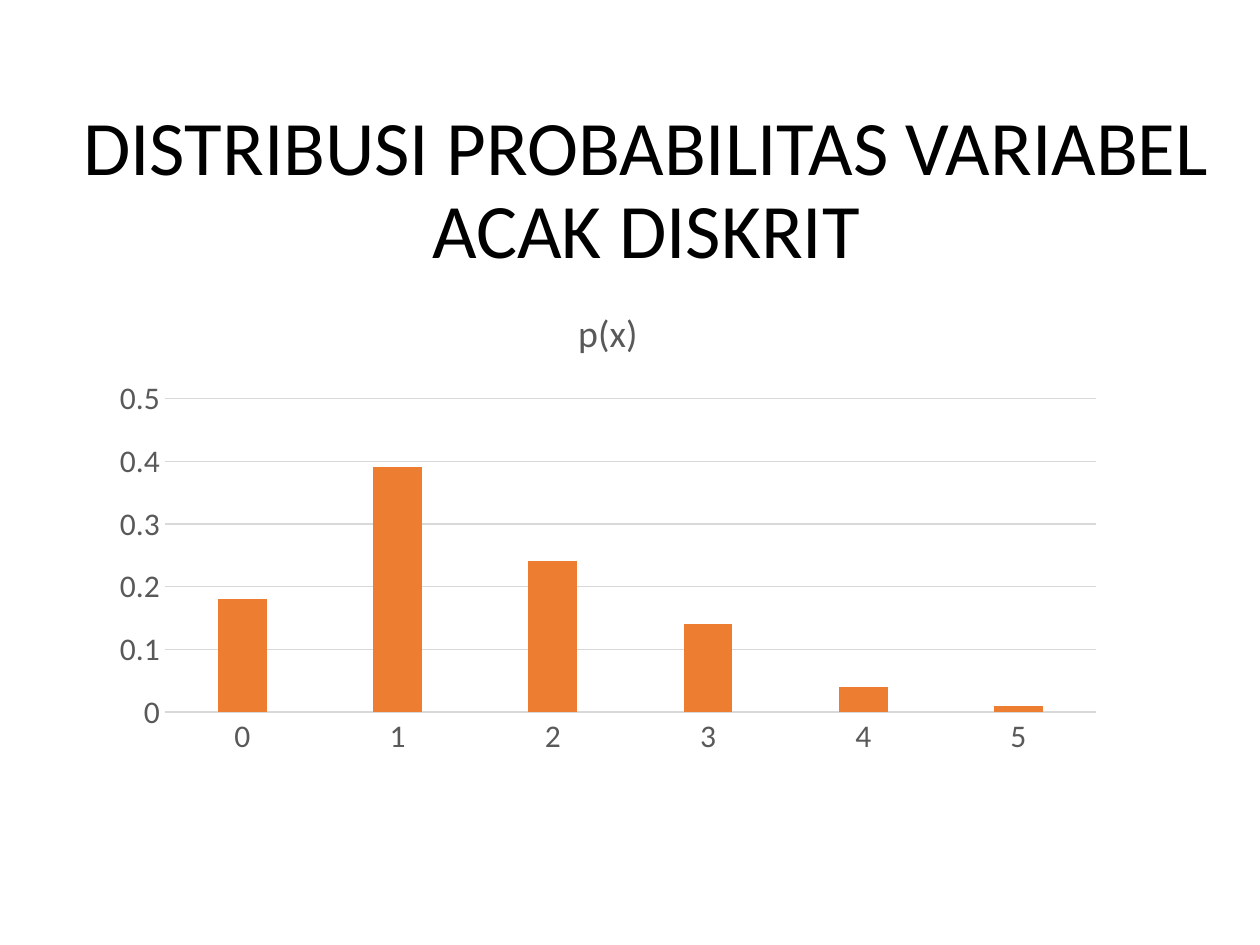
from pptx import Presentation
from pptx.chart.data import CategoryChartData
from pptx.dml.color import RGBColor
from pptx.enum.chart import XL_CHART_TYPE, XL_TICK_MARK
from pptx.enum.text import MSO_ANCHOR, MSO_AUTO_SIZE, PP_ALIGN
from pptx.util import Pt

COLUMNS = XL_CHART_TYPE.COLUMN_CLUSTERED
NO_TICK = XL_TICK_MARK.NONE
MIDDLE = MSO_ANCHOR.MIDDLE
NO_FIT = MSO_AUTO_SIZE.NONE
CENTER = PP_ALIGN.CENTER

BLACK = RGBColor(0x00, 0x00, 0x00)
GRAY = RGBColor(0x59, 0x59, 0x59)
RULE = RGBColor(0xD9, 0xD9, 0xD9)
ORANGE = RGBColor(0xED, 0x7D, 0x31)

PROBABILITIES = {"0": 0.18, "1": 0.39, "2": 0.24, "3": 0.14, "4": 0.04, "5": 0.01}


class SlideBuilder:
    font_name = "Calibri"

    def __init__(self, slide):
        self.slide = slide

    def style_font(self, font, size, color):
        font.name = self.font_name
        font.size = Pt(size)
        font.bold = False
        font.color.rgb = color

    def style_rule(self, line):
        line.color.rgb = RULE
        line.width = Pt(0.75)

    def title(self, text, left, top, width, height):
        heading = self.slide.shapes.title
        heading.left, heading.top = Pt(left), Pt(top)
        heading.width, heading.height = Pt(width), Pt(height)
        frame = heading.text_frame
        frame.text = text
        frame.word_wrap = True
        frame.auto_size = NO_FIT
        frame.vertical_anchor = MIDDLE
        paragraph = frame.paragraphs[0]
        paragraph.alignment = CENTER
        paragraph.line_spacing = 0.9
        self.style_font(paragraph.font, 44, BLACK)

    def column_chart(self, name, values, left, top, width, height):
        data = CategoryChartData()
        data.categories = list(values)
        data.add_series(name, list(values.values()))
        chart = self.slide.shapes.add_chart(
            COLUMNS, Pt(left), Pt(top), Pt(width), Pt(height), data).chart
        self.style_font(chart.font, 18, BLACK)
        chart.has_legend = False

        # Chart title
        chart.has_title = True
        caption = chart.chart_title
        caption.include_in_layout = False
        caption.text_frame.text = name
        self.style_font(caption.text_frame.paragraphs[0].font, 21.6, GRAY)

        # Columns
        plot = chart.plots[0]
        plot.vary_by_categories = False
        plot.gap_width = 219
        plot.overlap = -27
        fill = plot.series[0].format.fill
        fill.solid()
        fill.fore_color.rgb = ORANGE

        # Axes and gridlines
        for axis in (chart.category_axis, chart.value_axis):
            axis.major_tick_mark = axis.minor_tick_mark = NO_TICK
            self.style_font(axis.tick_labels.font, 18, GRAY)
        self.style_rule(chart.category_axis.format.line)
        value_axis = chart.value_axis
        value_axis.minimum_scale = 0
        value_axis.maximum_scale = 0.5
        value_axis.major_unit = 0.1
        value_axis.format.line.fill.background()
        self.style_rule(value_axis.major_gridlines.format.line)


def main():
    presentation = Presentation()
    presentation.slide_width, presentation.slide_height = Pt(720), Pt(540)
    title_only = presentation.slide_layouts[5]
    builder = SlideBuilder(presentation.slides.add_slide(title_only))

    # Heading
    builder.title("DISTRIBUSI PROBABILITAS VARIABEL ACAK DISKRIT",
                  18.72, 57.6, 701.28, 104.4)

    # Probability distribution
    builder.column_chart("p(x)", PROBABILITIES, 56.88, 162, 581.04, 275.04)

    presentation.save("out.pptx")


if __name__ == "__main__":
    main()
